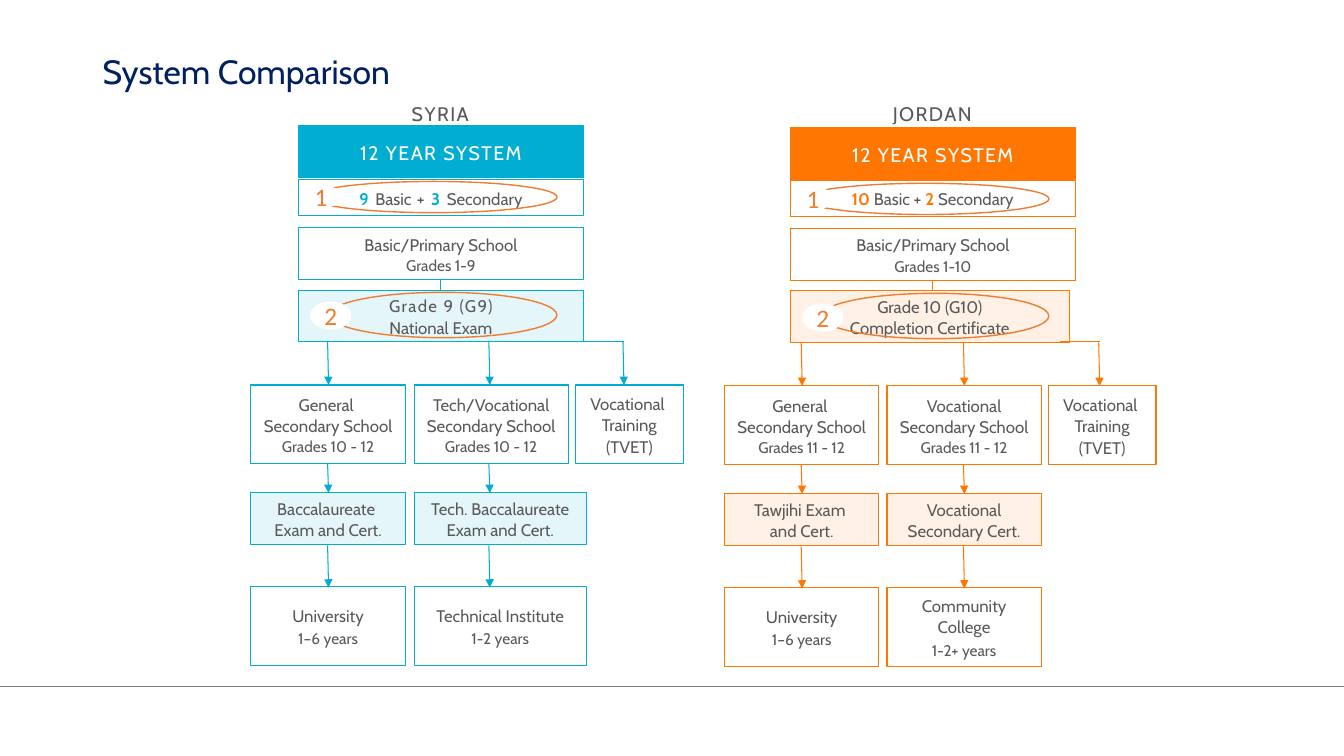
from dataclasses import dataclass

from lxml.etree import SubElement
from pptx import Presentation
from pptx.dml.color import RGBColor
from pptx.enum.shapes import MSO_CONNECTOR, MSO_SHAPE
from pptx.enum.text import MSO_ANCHOR, PP_ALIGN
from pptx.oxml.ns import qn
from pptx.slide import Slide
from pptx.text.text import TextFrame
from pptx.util import Pt

TEAL = RGBColor(0x01, 0xAD, 0xD0)
ORANGE = RGBColor(0xFF, 0x76, 0x02)
MARK = RGBColor(0xED, 0x7D, 0x31)
GREY = RGBColor(0x59, 0x59, 0x59)
RULE = RGBColor(0x7F, 0x7F, 0x7F)
NAVY = RGBColor(0x00, 0x20, 0x60)
WHITE = RGBColor(0xFF, 0xFF, 0xFF)

HEAD_WIDTH, BRANCH_WIDTH, TRAINING_WIDTH = 203.8, 110.2, 77
SHORT, TALL = 36.7, 56.2
EXAM_TOP, SCHOOL_TOP, CERT_TOP, END_TOP = 207.4, 275, 352.1, 419
SLANT = 0.7


@dataclass
class Span:
    text: str
    size: float = 12
    color: RGBColor = GREY
    bold: bool = False
    tracking: int = 0
    font: str = "Cabin"


@dataclass
class Area:
    left: float
    top: float
    width: float
    height: float


@dataclass
class Country:
    name: str
    color: RGBColor
    head_left: float
    branch_left: float
    drop: float
    head_drop: float
    second_gap: float
    third_gap: float
    arrow_gaps: tuple[float, float, float]
    exam_width: float
    elbow_left: float
    lower_width: float
    years: list[Span]
    basic_grades: str
    exam: list[Span]
    second_school: str
    school_grades: str
    certificates: tuple[list[str], list[str]]
    second_end: tuple[str, str]


SYRIA = Country(
    "SYRIA", TEAL, 213.1, 179.3, 0, 0, 116.5, 231.8, (54.7, 169.9, 265.7),
    HEAD_WIDTH, 416.9, 123.1,
    [Span("9 ", color=TEAL, bold=True, tracking=100), Span("Basic"),
     Span(" + ", tracking=100), Span("3 ", color=TEAL, bold=True, tracking=100),
     Span("Secondary")],
    "Grades 1-9", [Span("Grade 9 (G9)", tracking=100), Span("National Exam")],
    "Tech/Vocational", "Grades 10 - 12",
    (["Baccalaureate ", "Exam and Cert."], ["Tech. Baccalaureate Exam and Cert."]),
    ("Technical Institute", "1-2 years"))

JORDAN = Country(
    "JORDAN", ORANGE, 564.5, 517.6, 0.7, 1.3, 116, 231.2, (54.7, 170.6, 267.2),
    199.4, 757.4, BRANCH_WIDTH,
    [Span("10", color=ORANGE, bold=True), Span(" Basic + "),
     Span("2", color=ORANGE, bold=True), Span(" Secondary")],
    "Grades 1-10", [Span("Grade 10 (G10)"), Span("Completion Certificate")],
    "Vocational", "Grades 11 - 12",
    (["Tawjihi Exam ", "and Cert."], ["Vocational Secondary Cert."]),
    ("Community College", "1-2+ years"))


def format_span(run, span: Span) -> None:
    run.font.name = span.font
    run.font.size = Pt(span.size)
    run.font.bold = span.bold
    run.font.color.rgb = span.color
    if span.tracking:
        run._r.get_or_add_rPr().set("spc", str(span.tracking))


def write(frame: TextFrame, lines: list[list[Span]], spacing: float = 1.07,
          after: float = 0, align: PP_ALIGN = PP_ALIGN.CENTER) -> None:
    """Write one paragraph per line; `after` follows the first one."""
    frame.word_wrap = True
    for index, spans in enumerate(lines):
        para = frame.add_paragraph() if index else frame.paragraphs[0]
        para.alignment = align
        para.line_spacing = spacing
        para.space_after = Pt(0 if index else after)
        para.text = spans[0].text
        for span in spans[1:]:
            para.add_run().text = span.text
        for run, span in zip(para.runs, spans):
            format_span(run, span)


def add_label(page: Slide, area: Area, span: Span, **layout) -> TextFrame:
    box = page.shapes.add_textbox(Pt(area.left), Pt(area.top), Pt(area.width), Pt(area.height))
    write(box.text_frame, [[span]], **layout)
    return box.text_frame


def add_box(page: Slide, area: Area, color: RGBColor, lines: list[list[Span]],
            fill: RGBColor = WHITE, tinted: bool = False, after: float = 0) -> None:
    box = page.shapes.add_shape(
        MSO_SHAPE.RECTANGLE, Pt(area.left), Pt(area.top), Pt(area.width), Pt(area.height))
    box.shadow.inherit = False
    box.fill.solid()
    box.fill.fore_color.rgb = color if tinted else fill
    if tinted:
        tint = box._element.spPr.find(qn("a:solidFill")).find(qn("a:srgbClr"))
        SubElement(tint, qn("a:alpha")).set("val", "10000")
    box.line.color.rgb = color
    box.line.width = Pt(0.75)
    box.text_frame.vertical_anchor = MSO_ANCHOR.MIDDLE
    write(box.text_frame, lines, after=after)


def add_line(page: Slide, start: tuple[float, float], end: tuple[float, float],
             color: RGBColor, width: float = 0.75, arrow: bool = False) -> None:
    line = page.shapes.add_connector(
        MSO_CONNECTOR.STRAIGHT, *(Pt(value) for value in start + end))
    line.line.color.rgb = color
    line.line.width = Pt(width)
    if arrow:
        SubElement(line.line._get_or_add_ln(), qn("a:tailEnd")).set("type", "triangle")
    SubElement(line._element.spPr, qn("a:effectLst"))


def add_callout(page: Slide, ring: Area, badge: Area, number: str) -> None:
    for area in (ring, badge):
        oval = page.shapes.add_shape(
            MSO_SHAPE.OVAL, Pt(area.left), Pt(area.top), Pt(area.width), Pt(area.height))
        oval.shadow.inherit = False
        if area is ring:
            oval.fill.background()
            oval.line.color.rgb = MARK
            oval.line.width = Pt(1)
            continue
        oval.fill.solid()
        oval.fill.fore_color.rgb = WHITE
        oval.line.fill.background()
        frame = oval.text_frame
        frame.margin_left = frame.margin_right = frame.margin_top = frame.margin_bottom = 0
        frame.vertical_anchor = MSO_ANCHOR.MIDDLE
        write(frame, [[Span(number, 18, MARK, font="Calibri")]], spacing=1)


def draw_country(page: Slide, country: Country) -> None:
    color, left, drop = country.color, country.head_left, country.drop
    first = country.branch_left
    second, third = first + country.second_gap, first + country.third_gap

    # Common schooling
    add_label(page, Area(left + 52.8, 68.4, 97.2, 30.2), Span(country.name, 14, tracking=100), after=8)
    add_box(page, Area(left, 90 + country.head_drop, HEAD_WIDTH, SHORT), color,
            [[Span("12 YEAR SYSTEM", 14, WHITE, tracking=100)]], fill=color)
    add_box(page, Area(left, 128.2 + drop, HEAD_WIDTH, 25.9), color, [country.years])
    add_box(page, Area(left, 162.7 + drop, HEAD_WIDTH, SHORT), color,
            [[Span("Basic/Primary School")], [Span(country.basic_grades, 11)]])
    add_box(page, Area(left, EXAM_TOP + drop / 2, country.exam_width, SHORT), color,
            [[span] for span in country.exam], tinted=True)
    middle = left + HEAD_WIDTH / 2
    add_line(page, (middle, 200 + drop), (middle, EXAM_TOP + drop), color)

    # Branches: school, certificate, further study
    schools = ("General ", country.second_school)
    ends = (("University", "1–6 years"), country.second_end)
    lower_widths = (BRANCH_WIDTH, country.lower_width)
    for x, school, cert, end, width in zip(
            (first, second), schools, country.certificates, ends, lower_widths):
        add_box(page, Area(x, SCHOOL_TOP + drop, BRANCH_WIDTH, TALL), color,
                [[Span(school)], [Span("Secondary School")], [Span(country.school_grades, 11)]])
        add_box(page, Area(x, CERT_TOP + drop, width, SHORT), color,
                [[Span(text)] for text in cert], tinted=True)
        add_box(page, Area(x, END_TOP + drop, width, TALL), color,
                [[Span(end[0])], [Span(end[1], 11)]], after=2)
    add_box(page, Area(third, SCHOOL_TOP + drop, TRAINING_WIDTH, TALL), color,
            [[Span("Vocational ")], [Span("Training (TVET)")]])

    # Arrows
    steps = ((EXAM_TOP + SHORT, SCHOOL_TOP), (SCHOOL_TOP + TALL, CERT_TOP),
             (CERT_TOP + SHORT + 0.7, END_TOP + 0.7))
    for index, gap in enumerate(country.arrow_gaps):
        x = first + gap
        for top, bottom in steps[:1] if index == 2 else steps:
            add_line(page, (x, top + drop), (x + SLANT, bottom + drop), color, arrow=True)
    corner = first + country.arrow_gaps[2] + SLANT
    add_line(page, (country.elbow_left, 244.1), (corner, 244.1), color)

    # Numbered callouts
    add_callout(page, Area(left + 8.4, 129.6 + country.head_drop, 176.4, 22.3),
                Area(left + 2.2, 131.8 + country.head_drop, 28.1, 17.3), "1")
    add_callout(page, Area(left + 22, 208.8 + drop, 162.7, 32.4),
                Area(left + 8.4, 215.3 + 2 * drop, 29.5, 20.2), "2")


def main() -> None:
    deck = Presentation()
    deck.slide_width, deck.slide_height = Pt(960), Pt(540)
    page = deck.slides.add_slide(deck.slide_layouts[6])
    add_line(page, (0, 490.5), (960, 490.5), RULE, 0.25)
    for country in (SYRIA, JORDAN):
        draw_country(page, country)
    title = add_label(page, Area(66.2, 28.8, 838.8, 46.8),
                      Span("System Comparison", 24, NAVY), spacing=0.9, align=PP_ALIGN.LEFT)
    title.vertical_anchor = MSO_ANCHOR.MIDDLE
    deck.save("out.pptx")


if __name__ == "__main__":
    main()
